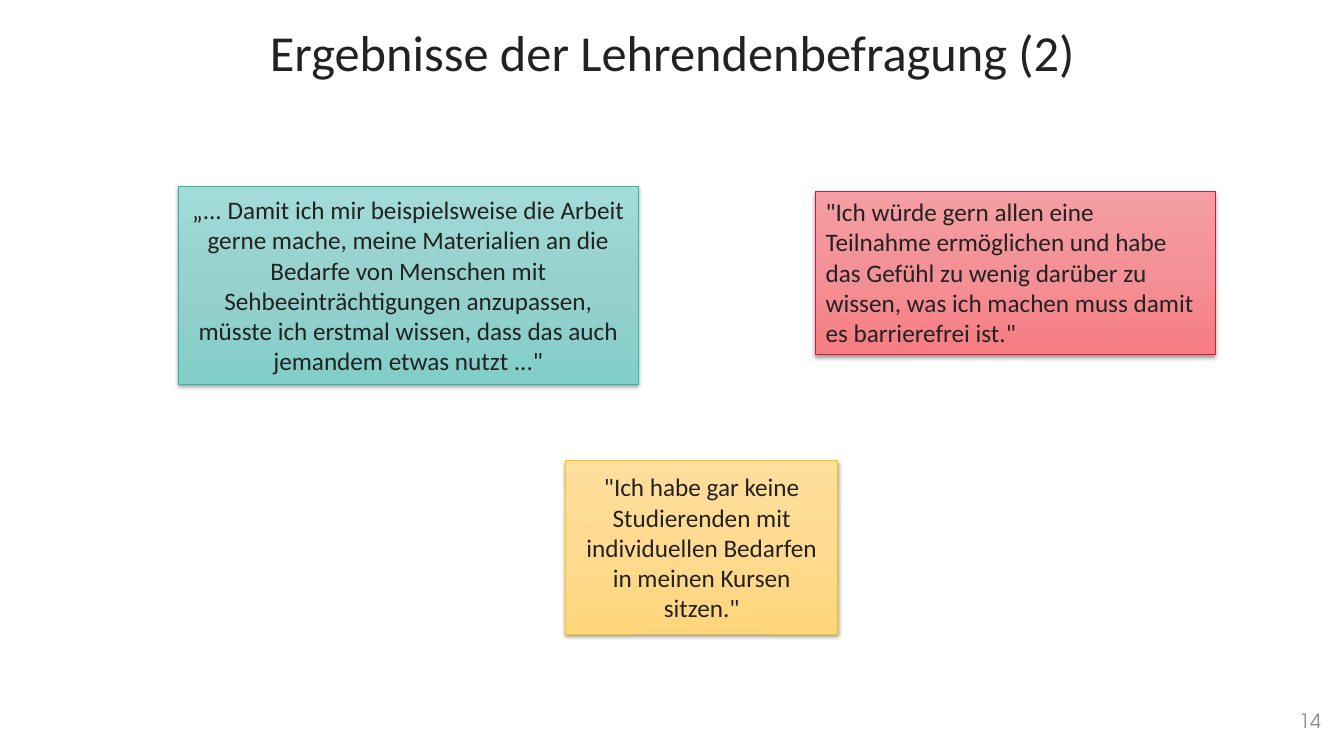
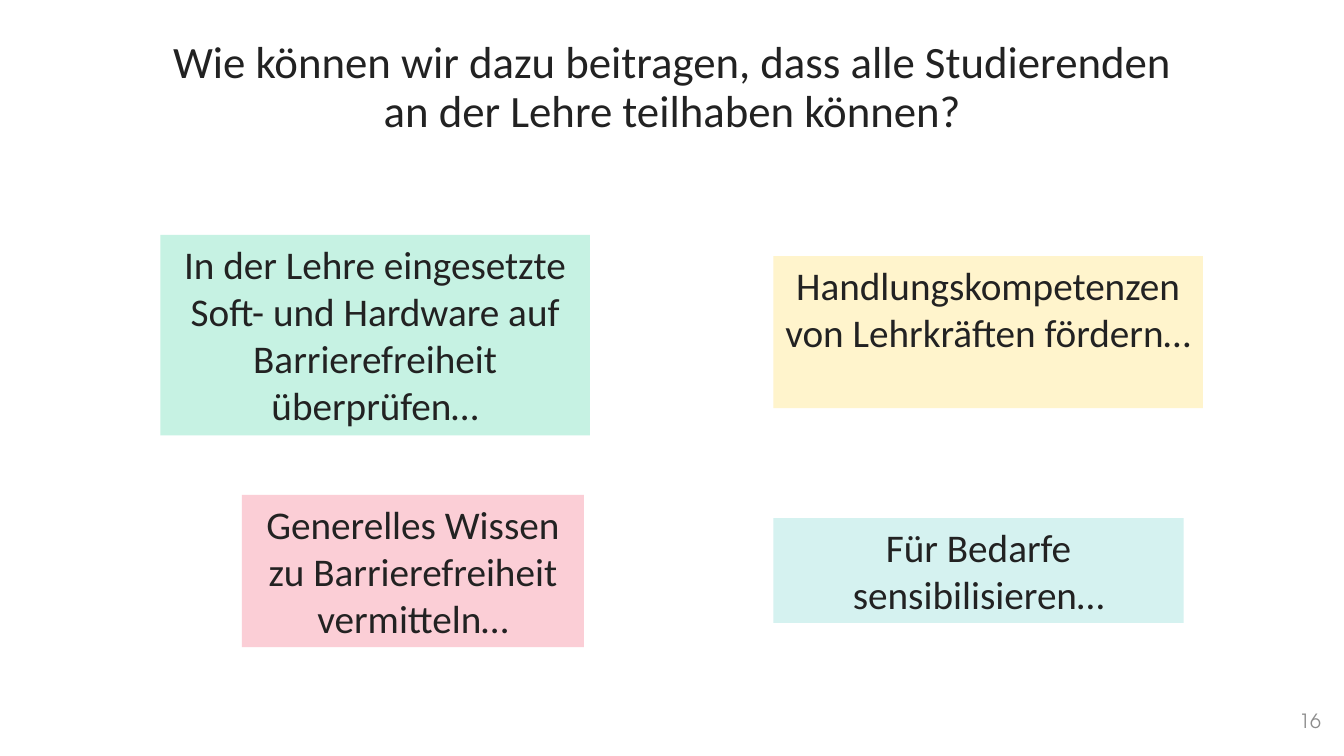
from copy import deepcopy

from lxml import etree
from pptx import Presentation
from pptx.dml.color import RGBColor
from pptx.enum.shapes import MSO_SHAPE
from pptx.enum.text import MSO_ANCHOR, PP_ALIGN
from pptx.oxml.ns import qn
from pptx.util import Inches, Pt

RECT = MSO_SHAPE.RECTANGLE
TOP, MIDDLE = MSO_ANCHOR.TOP, MSO_ANCHOR.MIDDLE
LEFT, CENTER, RIGHT = PP_ALIGN.LEFT, PP_ALIGN.CENTER, PP_ALIGN.RIGHT

BODY, FOOT = "Calibri", "TeX Gyre Adventor"
COLORS = {
    "ink": "222222", "gray": "8D8D8D", "shadow": "000000",
    "mint": "C6F2E3", "cream": "FFF4CC", "rose": "FBCED6", "aqua": "D5F2F0",
    "teal line": "38B2AC", "red line": "E21437", "gold line": "FEC700",
}
FADES = {
    "teal": ("A2DBD7", "96D1CD", "82CEC9"),
    "red": ("F59EA3", "F39196", "F67C82"),
    "gold": ("FFDF9E", "FFDA90", "FFD67C"),
}

QUOTES = [
    ((1.77, 1.85, 4.56, 1.96), "teal", CENTER, MIDDLE,
     "„... Damit ich mir beispielsweise die Arbeit gerne mache, meine "
     "Materialien an die Bedarfe von Menschen mit Sehbeeinträchtigungen "
     "anzupassen, müsste ich erstmal wissen, dass das auch jemandem etwas "
     "nutzt ...\""),
    ((8.09, 1.9, 3.96, 1.62), "red", LEFT, TOP,
     "\"Ich würde gern allen eine Teilnahme ermöglichen und habe das Gefühl "
     "zu wenig darüber zu wissen, was ich machen muss damit es barrierefrei "
     "ist.\""),
    ((5.61, 4.57, 2.7, 1.72), "gold", CENTER, MIDDLE,
     "\"Ich habe gar keine Studierenden mit individuellen Bedarfen in meinen "
     "Kursen sitzen.\""),
]
IDEAS = [
    ((1.59, 2.33, 4.26, 1.99), "mint",
     "In der Lehre eingesetzte Soft- und Hardware auf Barrierefreiheit "
     "überprüfen…"),
    ((7.67, 2.54, 4.26, 1.51), "cream",
     "Handlungskompetenzen von Lehrkräften fördern…"),
    ((2.4, 4.91, 3.39, 1.51), "rose",
     "Generelles Wissen zu Barrierefreiheit vermitteln…"),
    ((7.67, 5.14, 4.07, 1.04), "aqua", "Für Bedarfe sensibilisieren…"),
]


def place(box):
    return [Inches(n) for n in box]


def write(shape, text, size=18, font=BODY, color="ink", align=LEFT,
          anchor=TOP, lead=None):
    """Fill a shape with one formatted paragraph."""
    frame = shape.text_frame
    frame.word_wrap = True
    frame.vertical_anchor = anchor
    para = frame.paragraphs[0]
    para.alignment = align
    if lead:
        para.line_spacing = lead
    run = para.add_run()
    run.text = text
    run.font.size = Pt(size)
    run.font.name = font
    run.font.color.rgb = RGBColor.from_string(COLORS[color])


def label(slide, box, text, **style):
    write(slide.shapes.add_textbox(*place(box)), text, **style)


def panel(slide, box):
    shape = slide.shapes.add_shape(RECT, *place(box))
    shape.shadow.inherit = False
    return shape


def fade(shape, hues):
    """Blend three colours from top to bottom."""
    fill = shape.fill
    fill.gradient()
    fill.gradient_angle = 270
    first = shape._element.spPr.find(".//" + qn("a:gs"))
    first.addnext(deepcopy(first))
    for stop, hue, pos in zip(fill.gradient_stops, hues, (0, 0.5, 1)):
        stop.color.rgb = RGBColor.from_string(hue)
        stop.position = pos


def shade(shape):
    """Add a soft shadow straight below."""
    effects = shape._element.spPr.find(qn("a:effectLst"))
    outer = etree.SubElement(
        effects, qn("a:outerShdw"), blurRad=str(Pt(3.1)), dist=str(Pt(1.6)),
        dir="5400000", algn="ctr", rotWithShape="0")
    tone = etree.SubElement(outer, qn("a:srgbClr"), val=COLORS["shadow"])
    etree.SubElement(tone, qn("a:alpha"), val="38000")


def quote(slide, box, hue, align, anchor, text):
    shape = panel(slide, box)
    fade(shape, FADES[hue])
    shape.line.color.rgb = RGBColor.from_string(COLORS[hue + " line"])
    shape.line.width = Pt(0.5)
    shade(shape)
    write(shape, text, align=align, anchor=anchor)


def idea(slide, box, hue, text):
    shape = panel(slide, box)
    shape.fill.solid()
    shape.fill.fore_color.rgb = RGBColor.from_string(COLORS[hue])
    shape.line.fill.background()
    write(shape, text, size=28, align=CENTER)


def base(deck, title, box, size, number):
    """Start a slide with its title and page number."""
    slide = deck.slides.add_slide(deck.slide_layouts[6])
    label(slide, box, title, size=size, align=CENTER, lead=0.9)
    label(slide, (10.2, 6.95, 3, 0.4), str(number), size=14, font=FOOT,
          color="gray", align=RIGHT, anchor=MIDDLE)
    return slide


def main():
    deck = Presentation()
    deck.slide_width, deck.slide_height = Inches(13.33), Inches(7.5)

    slide = base(deck, "Ergebnisse der Lehrendenbefragung (2)",
                 (0.92, 0.23, 11.5, 1.45), 36, 14)
    for item in QUOTES:
        quote(slide, *item)

    slide = base(deck, "Wie können wir dazu beitragen, dass alle Studierenden "
                 "an der Lehre teilhaben können?",
                 (1.41, 0.35, 10.52, 2.07), 32, 16)
    for item in IDEAS:
        idea(slide, *item)

    deck.save("out.pptx")


if __name__ == "__main__":
    main()
